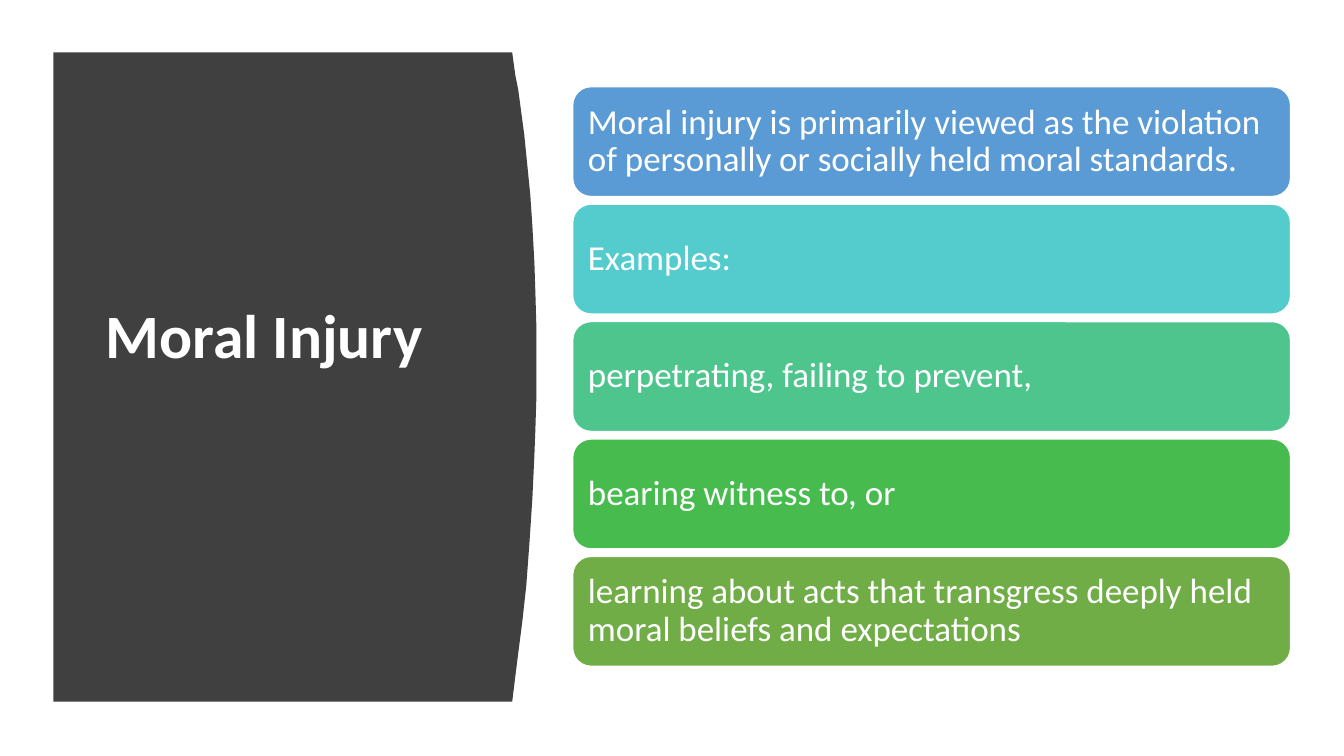
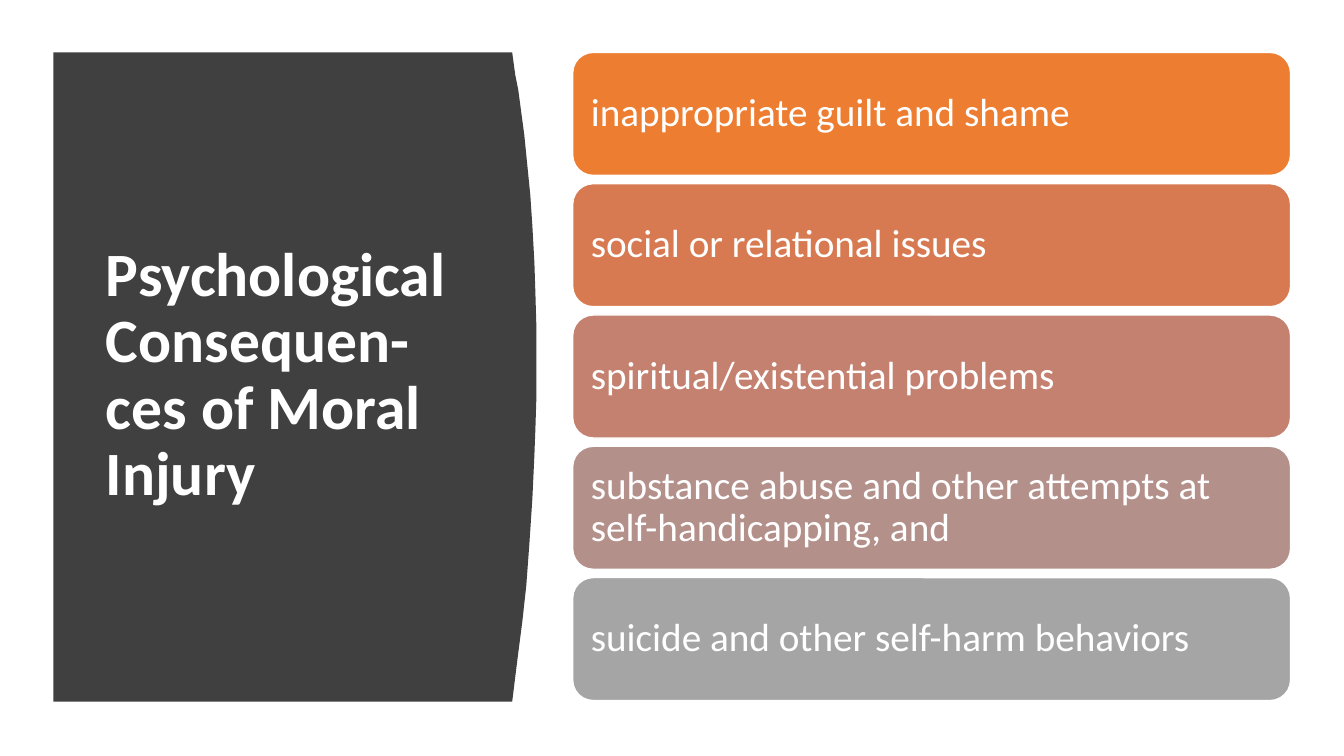
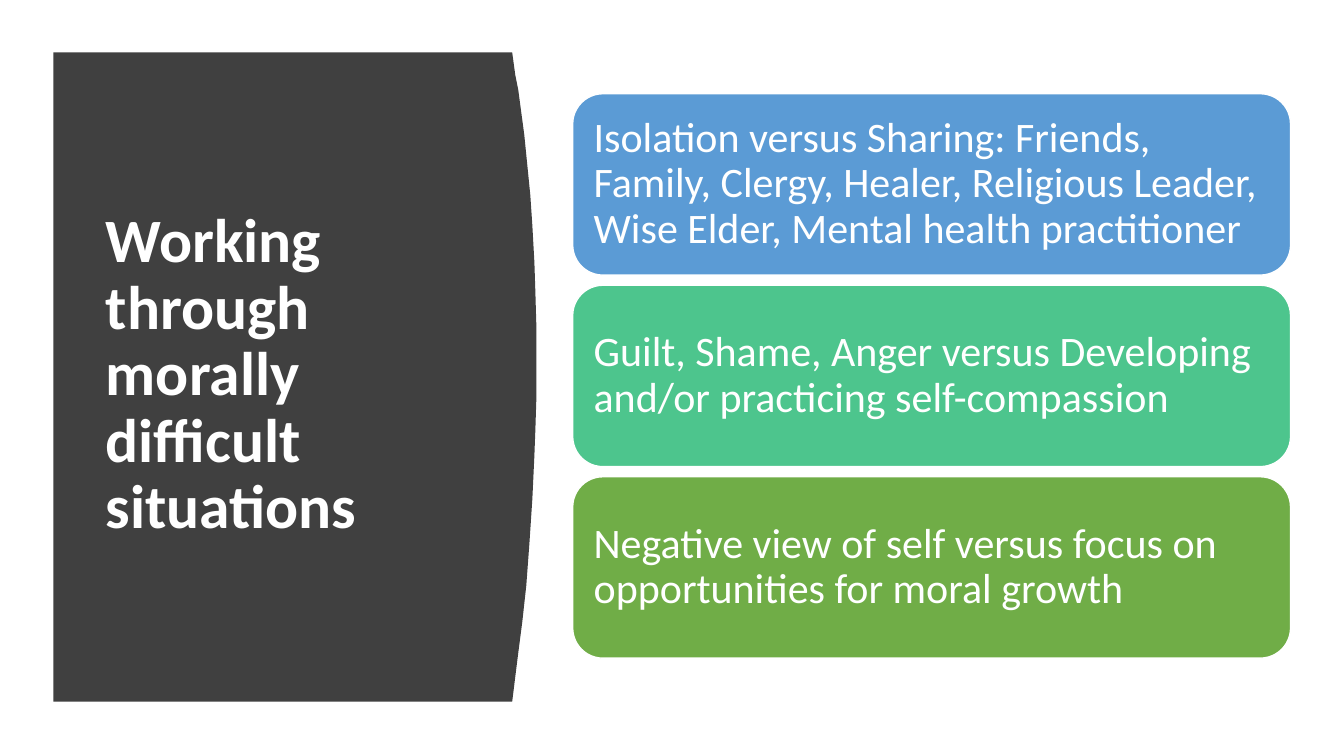
"""Build three moral injury slides, each a titled side panel with a stack of cards."""
from dataclasses import dataclass

from pptx import Presentation
from pptx.dml.color import RGBColor
from pptx.enum.shapes import MSO_SHAPE
from pptx.enum.text import MSO_ANCHOR, MSO_AUTO_SIZE, PP_ALIGN
from pptx.util import Inches, Pt

ROUNDED = MSO_SHAPE.ROUNDED_RECTANGLE
MIDDLE = MSO_ANCHOR.MIDDLE
LEFT = PP_ALIGN.LEFT
NO_FIT = MSO_AUTO_SIZE.NONE

FONT = "Calibri"
COLORS = {
    "white": "FFFFFF",
    "panel": "404040",
    "blue": "5B9BD5",
    "teal": "54CCCD",
    "mint": "4DC58D",
    "green": "48BB4F",
    "olive": "70AD47",
    "orange": "ED7D31",
    "copper": "D87A51",
    "rose": "C48170",
    "mauve": "B4908B",
    "gray": "A5A5A5",
}
TITLE_ONLY = 5
TITLE_SIZE = 44
LINE_SPACING = 0.9
CARD_LEFT, CARD_WIDTH = 5.68, 7.12
PANEL_LEFT = 0.53
PANEL_EDGE = [
    (5.08, 0.52), (5.11, 0.74), (5.14, 0.89), (5.16, 1.04), (5.18, 1.19),
    (5.2, 1.34), (5.23, 1.64), (5.26, 1.94), (5.28, 2.24), (5.3, 2.6),
    (5.31, 2.9), (5.32, 3.25), (5.32, 3.94), (5.31, 4.26), (5.3, 4.52),
    (5.28, 4.95), (5.25, 5.4), (5.22, 5.81), (5.18, 6.17), (5.14, 6.48),
    (5.11, 6.72), (5.08, 6.96),
]


@dataclass
class Card:
    text: str
    color: str


@dataclass
class CardSlide:
    title: str
    top: float
    bottom: float
    height: float
    size: int
    inset: float
    cards: list[Card]
    title_bottom: float = 0.05


SLIDES = [
    CardSlide("Moral Injury", 0.86, 6.61, 1.09, 25, 0.1, [
        Card("Moral injury is primarily viewed as the violation of personally "
             "or socially held moral standards.", "blue"),
        Card("Examples:", "teal"),
        Card("perpetrating, failing to prevent,", "mint"),
        Card("bearing witness to, or", "green"),
        Card("learning about acts that transgress deeply held moral beliefs "
             "and expectations", "olive"),
    ], title_bottom=0.79),
    CardSlide("Psychological Consequen-ces of Moral Injury",
              0.52, 6.95, 1.22, 28, 0.12, [
        Card("inappropriate guilt and shame", "orange"),
        Card("social or relational issues", "copper"),
        Card("spiritual/existential problems", "rose"),
        Card("substance abuse and other attempts at self-handicapping, and",
             "mauve"),
        Card("suicide and other self-harm behaviors", "gray"),
    ]),
    CardSlide("Working through morally difficult situations",
              0.93, 6.53, 1.8, 30, 0.12, [
        Card("Isolation versus Sharing: Friends, Family, Clergy, Healer, "
             "Religious Leader, Wise Elder, Mental health practitioner", "blue"),
        Card("Guilt, Shame, Anger versus Developing and/or practicing "
             "self-compassion", "mint"),
        Card("Negative view of self versus focus on opportunities for moral "
             "growth", "olive"),
    ]),
]


def rgb(name: str) -> RGBColor:
    return RGBColor.from_string(COLORS[name])


def write(tf, text: str, size: int, bold: bool = False) -> None:
    tf.word_wrap = True
    tf.auto_size = NO_FIT
    tf.vertical_anchor = MIDDLE
    p = tf.paragraphs[0]
    p.alignment = LEFT
    p.line_spacing = LINE_SPACING
    r = p.add_run()
    r.text = text
    r.font.name = FONT
    r.font.size = Pt(size)
    r.font.bold = bold
    r.font.color.rgb = rgb("white")


def add_panel(s):
    start, *edge = [(Inches(x), Inches(y)) for x, y in PANEL_EDGE]
    left = Inches(PANEL_LEFT)
    builder = s.shapes.build_freeform(*start)
    builder.add_line_segments([*edge, (left, edge[-1][1]), (left, start[1])])
    sp = builder.convert_to_shape()
    sp.shadow.inherit = False
    sp.fill.solid()
    sp.fill.fore_color.rgb = rgb("panel")
    sp.line.fill.background()
    return sp


def add_title(s, deck: CardSlide) -> None:
    title = s.shapes.title
    title.element.addprevious(add_panel(s).element)
    write(title.text_frame, deck.title, TITLE_SIZE, bold=True)
    title.text_frame.margin_bottom = Inches(deck.title_bottom)


def add_card(s, card: Card, top: float, deck: CardSlide) -> None:
    sp = s.shapes.add_shape(ROUNDED, Inches(CARD_LEFT), Inches(top),
                            Inches(CARD_WIDTH), Inches(deck.height))
    sp.shadow.inherit = False
    sp.fill.solid()
    sp.fill.fore_color.rgb = rgb(card.color)
    sp.line.color.rgb = rgb("white")
    sp.line.width = Pt(1)
    tf = sp.text_frame
    tf.margin_left = tf.margin_right = Inches(deck.inset)
    tf.margin_top = tf.margin_bottom = Inches(deck.inset)
    write(tf, card.text, deck.size)


def add_slide(prs, layout, deck: CardSlide) -> None:
    s = prs.slides.add_slide(layout)
    add_title(s, deck)
    pitch = (deck.bottom - deck.height - deck.top) / (len(deck.cards) - 1)
    for i, card in enumerate(deck.cards):
        add_card(s, card, deck.top + i * pitch, deck)


def prepare_layout(prs):
    layout = prs.slide_layouts[TITLE_ONLY]
    title, *footers = layout.placeholders
    title.left, title.top = Inches(0.95), Inches(1.11)
    title.width, title.height = Inches(3.74), Inches(5.24)
    for footer in footers:
        footer.element.getparent().remove(footer.element)
    return layout


def main() -> None:
    prs = Presentation()
    prs.slide_width, prs.slide_height = Inches(13.33), Inches(7.5)
    layout = prepare_layout(prs)
    for deck in SLIDES:
        add_slide(prs, layout, deck)
    prs.save("out.pptx")


if __name__ == "__main__":
    main()
